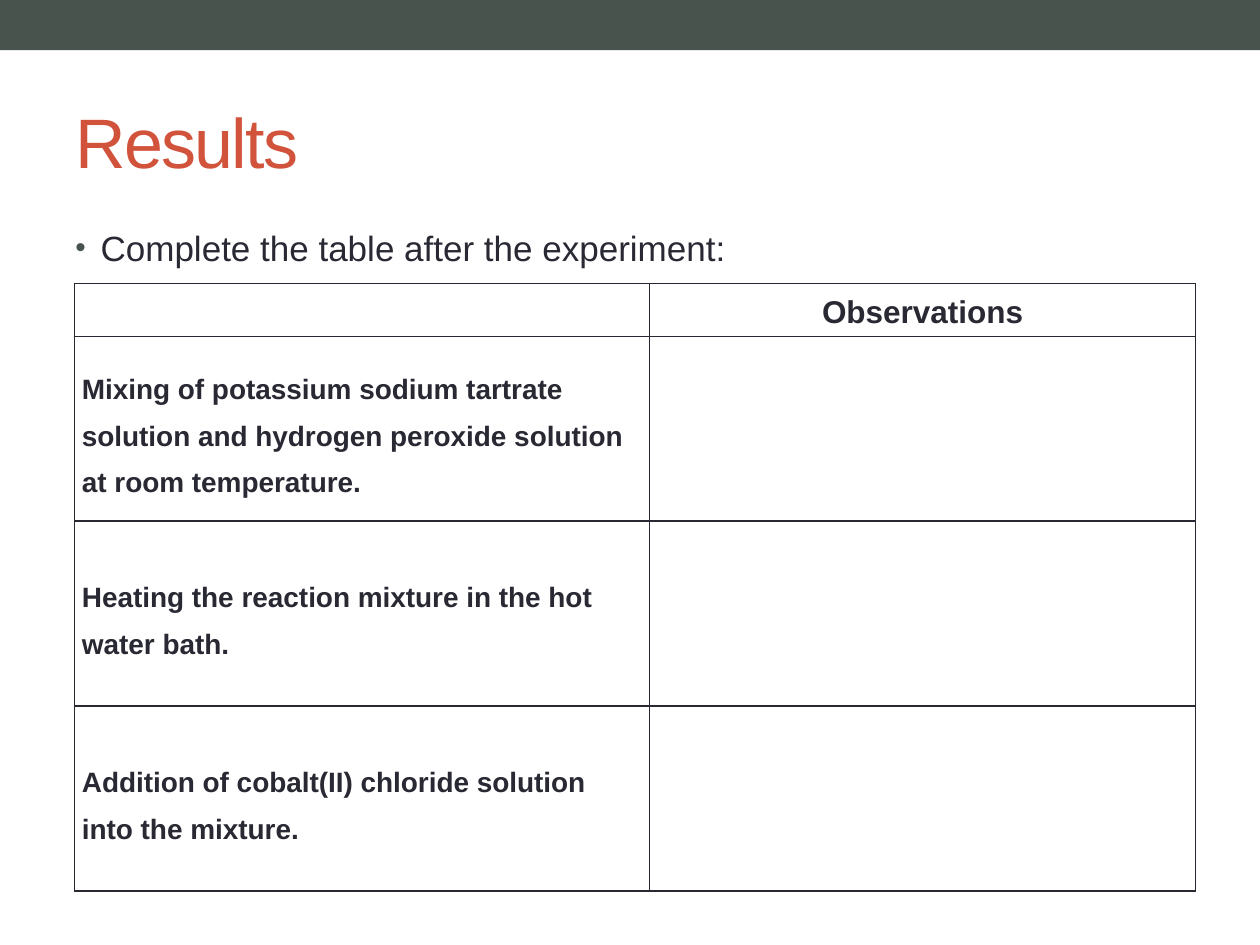
import pptx
import pptx.util
import pptx.dml.color
import pptx.enum.shapes
import pptx.enum.text
import pptx.oxml.ns
import lxml.etree

WIDE, HIGH = pptx.util.Inches(10), pptx.util.Inches(7.5)
INK, SLATE, RUST = "292934", "47534C", "D2533C"
ANCHOR = pptx.enum.text.MSO_ANCHOR
ALIGN = pptx.enum.text.PP_ALIGN
STEPS = [
    "Mixing of potassium sodium tartrate solution and hydrogen peroxide solution at room temperature.",
    "Heating the reaction mixture in the hot water bath.",
    "Addition of cobalt(II) chloride solution into the mixture.",
]


def color(code):
    return pptx.dml.color.RGBColor.from_string(code)


def share(x, y, w, h):
    return int(WIDE * x), int(HIGH * y), int(WIDE * w), int(HIGH * h)


def node(parent, tag, **attrs):
    return lxml.etree.SubElement(parent, pptx.oxml.ns.qn(tag), **attrs)


def write(frame, text, size, code=INK, bold=False):
    frame.text = text
    frame.word_wrap = True
    par = frame.paragraphs[0]
    font = par.runs[0].font
    font.name, font.size, font.bold = "Arial", pptx.util.Pt(size), bold
    font.color.rgb = color(code)
    return par


def band(slide, box):
    bar = slide.shapes.add_shape(pptx.enum.shapes.MSO_SHAPE.RECTANGLE, *box)
    bar.shadow.inherit = False
    bar.fill.solid()
    bar.fill.fore_color.rgb = color(SLATE)
    bar.line.fill.background()


def title(slide, box):
    frame = slide.shapes.add_textbox(*box).text_frame
    frame.vertical_anchor = ANCHOR.MIDDLE
    par = write(frame, "Results", 40, RUST)
    par.runs[0].font._element.set("spc", "-100")


def lead(slide, box):
    frame = slide.shapes.add_textbox(*box).text_frame
    par = write(frame, "Complete the table after the experiment:", 20)
    par.space_before = pptx.util.Pt(4)
    props = par._p.get_or_add_pPr()
    dent = pptx.util.Inches(0.2)
    props.set("marL", str(dent))
    props.set("indent", str(-dent))
    node(node(props, "a:buClr"), "a:srgbClr", val=SLATE)
    node(props, "a:buSzPct", val="85000")
    node(props, "a:buFont", typeface="Arial")
    node(props, "a:buChar", char="•")


def border(cell):
    props = cell._tc.get_or_add_tcPr()
    for side in "LRTB":
        line = node(props, f"a:ln{side}", w=str(pptx.util.Pt(1)))
        node(node(line, "a:solidFill"), "a:srgbClr", val=INK)


def grid(slide, box):
    left, top, width, height = box
    table = slide.shapes.add_table(len(STEPS) + 1, 2, *box).table
    table.first_row = table.horz_banding = False
    table.columns[0].width = int(width * 0.513)
    table.columns[1].width = width - table.columns[0].width
    head = int(height * 0.087)
    for i, row in enumerate(table.rows):
        row.height = (height - head) // len(STEPS) if i else head
    for cell in table.iter_cells():
        border(cell)
        cell.fill.background()
        cell.vertical_anchor = ANCHOR.MIDDLE
        cell.margin_left = cell.margin_right = pptx.util.Inches(0.06)
        cell.margin_top = cell.margin_bottom = 0
    par = write(table.cell(0, 1).text_frame, "Observations", 18, bold=True)
    par.alignment = ALIGN.CENTER
    par.line_spacing = 1.15
    for i, step in enumerate(STEPS, 1):
        write(table.cell(i, 0).text_frame, step, 16, bold=True).line_spacing = 1.5


def main():
    deck = pptx.Presentation()
    deck.slide_width, deck.slide_height = WIDE, HIGH
    slide = deck.slides.add_slide(deck.slide_layouts[6])
    band(slide, share(0, 0, 1, 0.053))
    title(slide, share(0.05, 0.077, 0.9, 0.144))
    lead(slide, share(0.05, 0.233, 0.9, 0.711))
    grid(slide, share(0.059, 0.3, 0.89, 0.643))
    deck.save("out.pptx")


if __name__ == "__main__":
    main()
